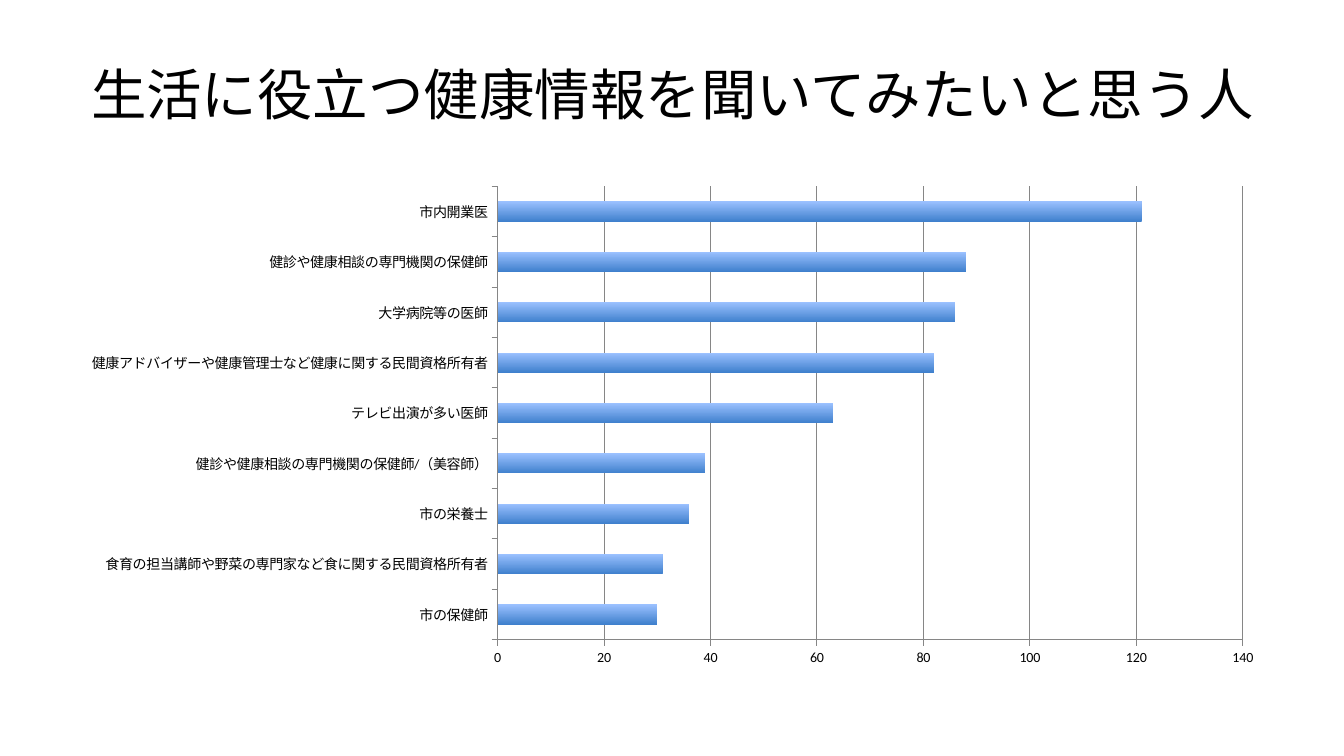
from dataclasses import dataclass
from pptx import Presentation
from pptx.chart.data import CategoryChartData
from pptx.dml.color import RGBColor
from pptx.enum.chart import XL_CHART_TYPE, XL_TICK_MARK
from pptx.enum.text import MSO_ANCHOR, MSO_AUTO_SIZE, PP_ALIGN
from pptx.util import Pt

SCALE = 9144
TITLE = "生活に役立つ健康情報を聞いてみたいと思う人"
VOTES = {
    "市の保健師": 30,
    "食育の担当講師や野菜の専門家など食に関する民間資格所有者": 31,
    "市の栄養士": 36,
    "健診や健康相談の専門機関の保健師/（美容師）": 39,
    "テレビ出演が多い医師": 63,
    "健康アドバイザーや健康管理士など健康に関する民間資格所有者": 82,
    "大学病院等の医師": 86,
    "健診や健康相談の専門機関の保健師": 88,
    "市内開業医": 121,
}


@dataclass(frozen=True)
class Theme:
    face: str = "Calibri"
    ink: RGBColor = RGBColor(0, 0, 0)
    paper: RGBColor = RGBColor(255, 255, 255)
    rule: RGBColor = RGBColor(0x86, 0x86, 0x86)
    dark: RGBColor = RGBColor(0x3F, 0x80, 0xCD)
    light: RGBColor = RGBColor(0x9B, 0xC1, 0xFF)
    head: float = 39.6
    label: float = 10


def scale(*px):
    return [n * SCALE for n in px]


class Page:
    def __init__(self, deck, theme):
        self.theme = theme
        self.slide = deck.slides.add_slide(deck.slide_layouts[5])
        back = self.slide.background.fill
        back.solid()
        back.fore_color.rgb = theme.paper

    def style(self, font, size):
        font.name = self.theme.face
        font.size = Pt(size)
        font.color.rgb = self.theme.ink

    def title(self, text, box):
        shape = self.slide.shapes.title
        shape.left, shape.top, shape.width, shape.height = scale(*box)
        frame = shape.text_frame
        frame.text = text
        frame.word_wrap = True
        frame.auto_size = MSO_AUTO_SIZE.NONE
        frame.vertical_anchor = MSO_ANCHOR.MIDDLE
        line = frame.paragraphs[0]
        line.alignment = PP_ALIGN.CENTER
        self.style(line.runs[0].font, self.theme.head)

    def bars(self, votes, box, top, step):
        data = CategoryChartData()
        data.categories = list(votes)
        data.add_series("Series 1", list(votes.values()))
        kind = XL_CHART_TYPE.BAR_CLUSTERED
        chart = self.slide.shapes.add_chart(kind, *scale(*box), data).chart
        chart.has_legend = False
        chart.has_title = False
        self.style(chart.font, self.theme.label)
        plot = chart.plots[0]
        plot.gap_width = 150
        plot.vary_by_categories = False
        fill = plot.series[0].format.fill
        fill.gradient()
        fill.gradient_angle = 90
        for stop, color in zip(fill.gradient_stops, (self.theme.dark, self.theme.light)):
            stop.color.rgb = color
        for axis in (chart.category_axis, chart.value_axis):
            axis.major_tick_mark = XL_TICK_MARK.OUTSIDE
            axis.minor_tick_mark = XL_TICK_MARK.NONE
            self.rule(axis.format.line)
        axis = chart.value_axis
        axis.minimum_scale = 0
        axis.maximum_scale = top
        axis.major_unit = step
        axis.has_major_gridlines = True
        self.rule(axis.major_gridlines.format.line)

    def rule(self, line):
        line.color.rgb = self.theme.rule
        line.width = Pt(0.75)


def main():
    deck = Presentation()
    deck.slide_width, deck.slide_height = scale(1333, 750)
    page = Page(deck, Theme())
    page.title(TITLE, (67, 30, 1200, 125))
    page.bars(VOTES, (67, 175, 1200, 495), 140, 20)
    deck.save("out.pptx")


if __name__ == "__main__":
    main()
